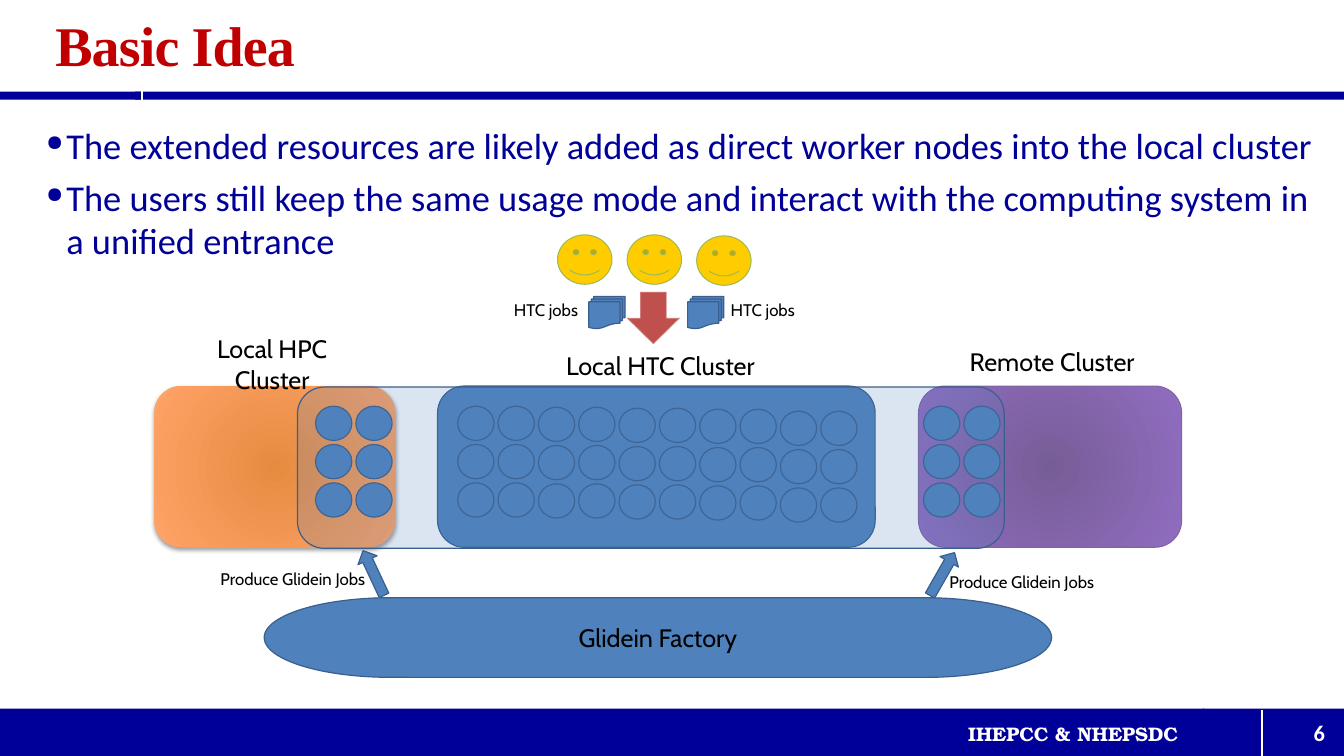
import pptx
import pptx.util
import pptx.dml.color
import pptx.enum.shapes
import pptx.enum.text
import pptx.oxml
import pptx.oxml.ns
import lxml.etree

PX = 9144
NAVY, WHITE, BLACK, RED = "000099", "FFFFFF", "000000", "C00000"
BLUE, EDGE = "4F81BD", "3A5F8C"
SHAPE = pptx.enum.shapes.MSO_SHAPE
ALIGN = pptx.enum.text.PP_ALIGN
ANCHOR = pptx.enum.text.MSO_ANCHOR
qn = pptx.oxml.ns.qn


def px(*values):
    return [pptx.util.Emu(v * PX) for v in values]


def rgb(value):
    return pptx.dml.color.RGBColor.from_string(value)


def add_xml(parent, tag, **attrs):
    return lxml.etree.SubElement(parent, qn(tag), attrs)


def set_alpha(fill, percent):
    clr = fill._xPr.find(".//" + qn("a:srgbClr"))
    add_xml(clr, "a:alpha", val=str(percent * 1000))


def shape(s, kind, x, y, w, h, fill=BLUE, line=EDGE, width=0.85, rot=0):
    sp = s.shapes.add_shape(kind, *px(x, y, w, h))
    sp.shadow.inherit = False
    sp.rotation = rot
    sp.fill.solid()
    sp.fill.fore_color.rgb = rgb(fill)
    if line:
        sp.line.color.rgb = rgb(line)
        sp.line.width = pptx.util.Pt(width)
    else:
        sp.line.fill.background()
    return sp


def radial(sp, inner, outer):
    sp.fill.gradient()
    for stop, color in zip(sp.fill.gradient_stops, (inner, outer)):
        stop.color.rgb = rgb(color)
    grad = sp._element.spPr.find(qn("a:gradFill"))
    grad.remove(grad.find(qn("a:lin")))
    circle = add_xml(grad, "a:path", path="circle")
    add_xml(circle, "a:fillToRect", l="50000", t="50000", r="50000", b="50000")


def drop_shadow(sp):
    effects = sp._element.spPr.find(qn("a:effectLst"))
    shadow = add_xml(effects, "a:outerShdw", blurRad="44450", dist="21590",
                     dir="5400000", rotWithShape="0")
    clr = add_xml(shadow, "a:srgbClr", val=BLACK)
    add_xml(clr, "a:alpha", val="40000")


def tick(s, x, y1, y2):
    c = s.shapes.add_connector(pptx.enum.shapes.MSO_CONNECTOR.STRAIGHT, *px(x, y1, x, y2))
    c.line.color.rgb = rgb(WHITE)
    c.line.width = pptx.util.Pt(1.5)
    add_xml(c._element.spPr, "a:effectLst")


def write(p, text, size=18, font="Cabin", color=BLACK, bold=False,
          align=ALIGN.CENTER, spacing=0):
    p.alignment = align
    r = p.add_run()
    r.text = text
    r.font.size = pptx.util.Pt(size)
    r.font.name = font
    r.font.bold = bold
    r.font.color.rgb = rgb(color)
    if spacing:
        r._r.get_or_add_rPr().set("spc", str(spacing))


def textbox(s, x, y, w, h, anchor=ANCHOR.MIDDLE):
    tf = s.shapes.add_textbox(*px(x, y, w, h)).text_frame
    tf.word_wrap = True
    tf.vertical_anchor = anchor
    return tf


def label(s, x, y, w, h, text, **style):
    tf = textbox(s, x, y, w, h)
    write(tf.paragraphs[0], text, **style)
    return tf


def header(s, x, y, w, h, title):
    bar = y + h - 8
    shape(s, SHAPE.RECTANGLE, x + 134, bar, w - 134, 8, NAVY, None)
    shape(s, SHAPE.RECTANGLE, x, bar, 141, 8, NAVY, None)
    tick(s, x + 141, bar + 8, bar - 1)
    tf = label(s, x + 45, y + 12, 1134, 73, title, size=40, font="Times New Roman",
               color=RED, bold=True, align=ALIGN.LEFT, spacing=-60)
    tf.paragraphs[0].line_spacing = 0.9


def footer(s, x, y, w, h, text, number):
    shape(s, SHAPE.RECTANGLE, x, y, w - 139, h, NAVY, None)
    shape(s, SHAPE.RECTANGLE, x + w - 140, y, 140, h, NAVY, None)
    label(s, x + w - 205, y + 1, 196, 46, number, size=16, font="Calibri",
          color=WHITE, bold=True, align=ALIGN.RIGHT)
    tick(s, x + w - 81, y + 1, y + h)
    label(s, x + w - 525, y + 8, 513, 34, text, size=14, font="TeX Gyre Bonum",
          color=WHITE, bold=True)


def bullets(s, x, y, w, h, items):
    tf = textbox(s, x, y, w, h, ANCHOR.TOP)
    for i, item in enumerate(items):
        p = tf.add_paragraph() if i else tf.paragraphs[0]
        pPr = p._p.get_or_add_pPr()
        pPr.set("marL", str(20 * PX))
        pPr.set("indent", str(-20 * PX))
        add_xml(pPr, "a:buSzPct", val="60000")
        add_xml(pPr, "a:buChar", char="●")
        if i:
            p.space_before = pptx.util.Pt(6)
        write(p, item, size=26, font="Calibri", color=NAVY, align=ALIGN.LEFT)


def nodes(s, x, y):
    for row in range(3):
        for col in range(2):
            shape(s, SHAPE.OVAL, x + 40 * col, y + 38 * row, 36, 34)


def clusters(s, x, y, w, h):
    box = SHAPE.ROUNDED_RECTANGLE
    hpc = shape(s, box, x, y, 239, h, line=None)
    radial(hpc, "E68C41", "FFA367")
    drop_shadow(hpc)
    shape(s, box, x + 281, y, 434, h)
    remote = shape(s, box, x + w - 261, y, 261, h, line="8064A2", width=0.75)
    radial(remote, "775D97", "916DC1")
    nodes(s, x + 160, y + 20)
    for pair, drop in enumerate((20, 21, 22, 23, 25)):
        nodes(s, x + 301 + 80 * pair, y + drop)
    nodes(s, x + w - 256, y + 20)
    pool = shape(s, box, x + 142, y + 1, 701, h)
    set_alpha(pool.fill, 20)
    for dx, dy, width, name in ((15, -44, 204, "Local HPC Cluster"),
                                (784, -46, 213, "Remote Cluster"),
                                (388, -42, 228, "Local HTC Cluster")):
        label(s, x + dx, y + dy, width, 44, name)


def users(s, x, y, w, h):
    mid = x + w // 2
    for i, dy in enumerate((0, 0, 1)):
        shape(s, SHAPE.SMILEY_FACE, mid - 96 + 69 * i, y + dy, 54, 49,
              "FFCC00", "9BBB59", 0.75)
    arrow = shape(s, SHAPE.RIGHT_ARROW, mid - 27, y + 56, 52, 53,
                  "C0504D", WHITE, 1.2, 90)
    set_alpha(arrow.line.fill, 25)
    for left in (mid - 65, mid + 33):
        shape(s, SHAPE.FLOWCHART_MULTIDOCUMENT, left, y + 61, 36, 32)
    for left in (x, x + w - 177):
        label(s, left, y + 52, 177, 44, "HTC jobs", size=12)


def factory(s, x, y, w, h):
    sp = shape(s, SHAPE.FLOWCHART_TERMINATOR, x, y + h - 79, w, 79)
    sp.text_frame.vertical_anchor = ANCHOR.MIDDLE
    write(sp.text_frame.paragraphs[0], "Glidein Factory")
    for dx, dy, rot in ((98, 0, 154.9), (662, 1, 209.7)):
        shape(s, SHAPE.DOWN_ARROW, x + dx, y + dy, 21, 49, rot=rot)
    for dx, dy in ((-60, 8), (663, 11)):
        label(s, x + dx, y + dy, 177, 44, "Produce Glidein Jobs", size=12)


def main():
    prs = pptx.Presentation()
    prs.slide_width, prs.slide_height = px(1333, 750)
    s = prs.slides.add_slide(prs.slide_layouts[6])
    header(s, 0, 0, 1333, 99, "Basic Idea")
    footer(s, 0, 703, 1333, 47, "IHEPCC & NHEPSDC", "6")
    bullets(s, 36, 117, 1280, 557, (
        "The extended resources are likely added as direct worker nodes into the local cluster",
        "The users still keep the same usage mode and interact with the computing system in a unified entrance",
    ))
    clusters(s, 153, 383, 1019, 160)
    users(s, 453, 233, 392, 109)
    factory(s, 262, 544, 781, 128)
    prs.save("out.pptx")


if __name__ == "__main__":
    main()
